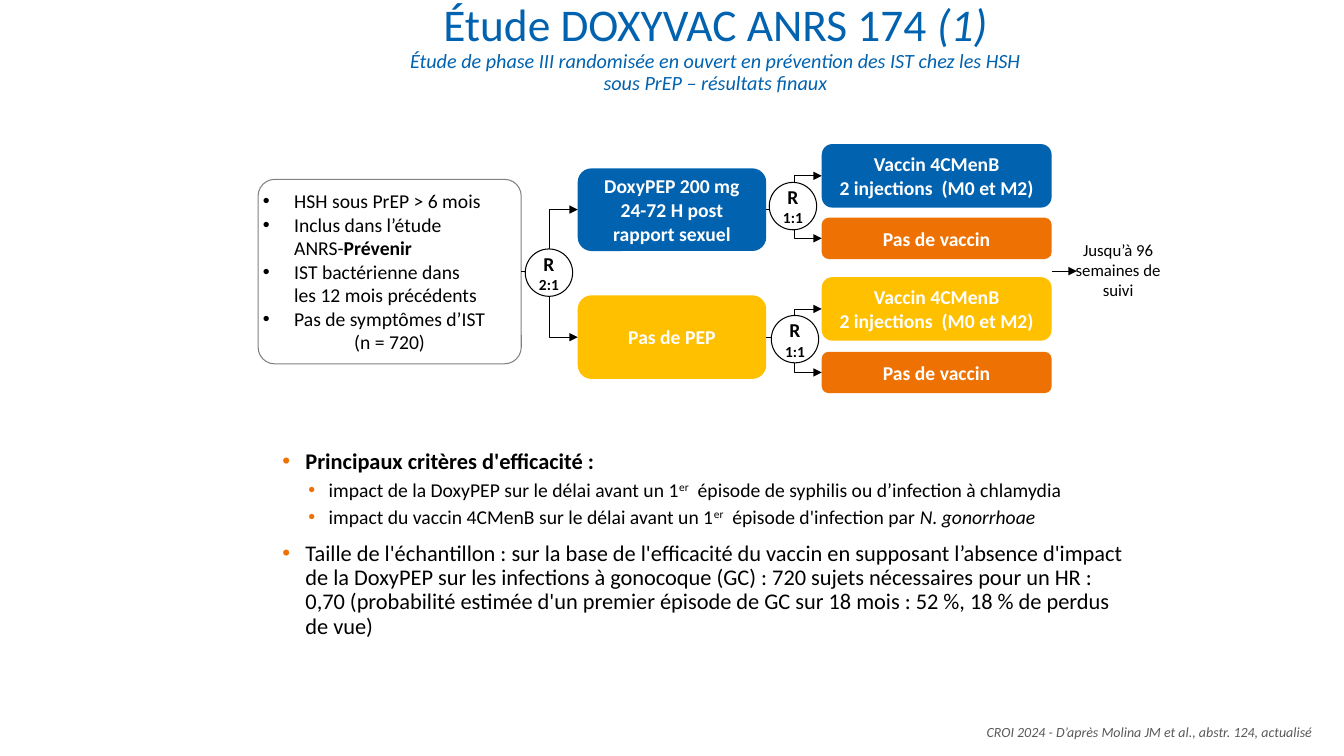
from copy import deepcopy

from lxml.etree import SubElement
from pptx import Presentation
from pptx.dml.color import RGBColor
from pptx.enum.shapes import MSO_CONNECTOR, MSO_SHAPE
from pptx.enum.text import MSO_ANCHOR, PP_ALIGN
from pptx.oxml.ns import qn
from pptx.util import Pt

PX = 9144  # one hundredth of an inch
FONT = "Calibri"
BLUE = RGBColor(0x01, 0x62, 0xAF)
GOLD = RGBColor(0xFF, 0xC0, 0x00)
ORANGE = RGBColor(0xEE, 0x72, 0x03)
GREY = RGBColor(0x80, 0x80, 0x80)
DARK = RGBColor(0x59, 0x59, 0x59)
BLACK = RGBColor(0, 0, 0)
WHITE = RGBColor(0xFF, 0xFF, 0xFF)

BOLD = {"bold": True}
ITALIC = {"italic": True}
MID = {"alignment": PP_ALIGN.CENTER}
LEFT = {"alignment": PP_ALIGN.LEFT}
RIGHT = {"alignment": PP_ALIGN.RIGHT}
TIGHT = {"line_spacing": 0.9}
MAIN = {**LEFT, **TIGHT, "space_before": Pt(10)}
SUB = {**LEFT, **TIGHT, "space_before": Pt(4), "level": 1}
# Bullets: left margin, hanging indent, colour
ITEM = (31, 31, BLACK)
FIRST = (23, 23, ORANGE)
SECOND = (46, 20, ORANGE)


def apply(target, style):
    for name, value in style.items():
        setattr(target, name, value)


def add_mark(para, margin, hang, tint):
    """Put a coloured bullet with a hanging indent on a paragraph."""
    props = para._p.get_or_add_pPr()
    props.set("marL", str(margin * PX))
    props.set("indent", str(-hang * PX))
    SubElement(SubElement(props, qn("a:buClr")), qn("a:srgbClr")).set("val", str(tint))
    SubElement(props, qn("a:buFont")).set("typeface", "Arial")
    SubElement(props, qn("a:buChar")).set("char", "•")


def add_run(para, text, style, tint):
    """Add text in one format; each newline becomes a line break of the same size."""
    style = dict(style)
    raised = style.pop("raised", 0)
    for i, part in enumerate(text.split("\n")):
        if i:
            para.add_line_break()
            para._p[-1].append(deepcopy(props))
        run = para.add_run()
        run.text = part
        apply(run.font, {"name": FONT, **style})
        run.font.color.rgb = tint
        props = run._r.get_or_add_rPr()
        if raised:
            props.set("baseline", str(raised * 1000))


def write(shape, paras, size, tint, anchor=MSO_ANCHOR.MIDDLE, pad=(0, 0), wrap=True):
    """Fill a shape with paragraphs of (format, bullet, runs)."""
    frame = shape.text_frame
    side, top = (n * PX for n in pad)
    apply(frame, {"word_wrap": wrap, "vertical_anchor": anchor,
                  "margin_left": side, "margin_right": side,
                  "margin_top": top, "margin_bottom": top})
    for i, (style, mark, runs) in enumerate(paras):
        para = frame.add_paragraph() if i else frame.paragraphs[0]
        apply(para, style)
        if mark:
            add_mark(para, *mark)
        for text, look in runs:
            add_run(para, text, {"size": Pt(size), **look}, tint)


def add_text(slide, spot, *args, **more):
    write(slide.shapes.add_textbox(*(n * PX for n in spot)), *args, **more)


def add_box(slide, spot, fill=None, line=None, kind=MSO_SHAPE.ROUNDED_RECTANGLE):
    box = slide.shapes.add_shape(kind, *(n * PX for n in spot))
    box.shadow.inherit = False
    if fill is None:
        box.fill.background()
    else:
        box.fill.solid()
        box.fill.fore_color.rgb = fill
    if line is None:
        box.line.fill.background()
    else:
        box.line.color.rgb = line
        box.line.width = Pt(0.75)
    return box


def add_arm(slide, spot, fill, lines):
    """Add one coloured treatment box."""
    box = add_box(slide, spot, fill)
    paras = [(MID, None, [(line, BOLD)]) for line in lines]
    write(box, paras, 14, WHITE, pad=(10, 5), wrap=False)
    return box


def add_arrow(slide, kind, *ends):
    arrow = slide.shapes.add_connector(kind, *ends)
    arrow.line.color.rgb = BLACK
    arrow.line.width = Pt(0.5)
    SubElement(arrow.line._get_or_add_ln(), qn("a:tailEnd")).set("type", "triangle")
    SubElement(arrow._element.spPr, qn("a:effectLst"))
    return arrow


def join(slide, start, end):
    """Lead a bent arrow from a box's right side to another's left side."""
    arrow = add_arrow(slide, MSO_CONNECTOR.ELBOW,
                      start.left + start.width, start.top + start.height // 2,
                      end.left, end.top + end.height // 2)
    arrow.begin_connect(start, 3)
    arrow.end_connect(end, 1)


def add_split(slide, left, top, ratio):
    """Add a circle that marks a randomisation."""
    disc = add_box(slide, (left, top, 47, 47), WHITE, BLACK, MSO_SHAPE.OVAL)
    write(disc, [(MID, None, [("R", BOLD)]),
                 (MID, None, [(ratio, {**BOLD, "size": Pt(11)})])], 14, BLACK)


def add_scheme(slide):
    """Draw the trial: inclusion, two randomisations and follow-up."""
    doxy = add_arm(slide, (573, 167, 187, 82), BLUE,
                   ["DoxyPEP 200 mg", "24-72 H post\nrapport sexuel"])
    none = add_arm(slide, (573, 293, 187, 83), GOLD, ["Pas de PEP"])

    entry = add_box(slide, (256, 178, 261, 183), line=GREY)
    entry.adjustments[0] = 0.09
    points = [[("HSH sous PrEP > 6 mois", {})],
              [("Inclus dans l’étude\nANRS-", {}), ("Prévenir", BOLD)],
              [("IST bactérienne dans\nles 12 mois précédents", {})],
              [("Pas de symptômes d’IST", {})]]
    write(entry, [(LEFT, ITEM, runs) for runs in points]
          + [(MID, None, [("(n = 720)", {})])],
          14, BLACK, anchor=MSO_ANCHOR.TOP, pad=(0, 5))

    follow = add_box(slide, (1052, 229, 114, 78))
    write(follow, [({**MID, "space_before": Pt(2)}, None,
                    [("Jusqu’à 96 semaines de suivi", {})])],
          12, BLACK, anchor=MSO_ANCHOR.TOP, pad=(10, 5))

    pairs = [(entry, doxy), (entry, none)]
    for start, top, low, fill in ((doxy, 143, 216, BLUE), (none, 275, 349, GOLD)):
        shot = add_arm(slide, (815, top, 228, 63), fill,
                       ["Vaccin 4CMenB", "2 injections  (M0 et M2)"])
        bare = add_arm(slide, (815, low, 228, 41), ORANGE, ["Pas de vaccin"])
        pairs += [(start, shot), (start, bare)]
    for start, end in pairs:
        join(slide, start, end)
    add_arrow(slide, MSO_CONNECTOR.STRAIGHT, *(n * PX for n in (1043, 269, 1068, 269)))

    for left, top, ratio in ((521, 247, "2:1"), (763, 181, "1:1"), (765, 313, "1:1")):
        add_split(slide, left, top, ratio)


def main():
    deck = Presentation()
    deck.slide_width, deck.slide_height = 1333 * PX, 750 * PX
    slide = deck.slides.add_slide(deck.slide_layouts[6])

    add_text(slide, (152, 16, 1115, 64), [({**MID, **TIGHT}, None, [
        ("Étude DOXYVAC ANRS 174 ", {}),
        ("(1)\n", ITALIC),
        ("Étude de phase III randomisée en ouvert en prévention des IST chez les HSH\n"
         "sous PrEP – résultats finaux", {**ITALIC, "size": Pt(14.4)}),
    ])], 32.4, BLUE)

    small, raised = {"size": Pt(14)}, {"size": Pt(14), "raised": 30}
    add_text(slide, (280, 447, 836, 247), [
        (MAIN, FIRST, [("Principaux critères d'efficacité :", BOLD)]),
        (SUB, SECOND, [
            ("impact de la DoxyPEP sur le délai avant un 1", small), ("er", raised),
            ("  épisode de syphilis ou d’infection à chlamydia", small)]),
        (SUB, SECOND, [
            ("impact du vaccin 4CMenB sur le délai avant un 1", small), ("er", raised),
            ("  épisode d'infection par ", small),
            ("N. gonorrhoae", {**small, **ITALIC})]),
        (MAIN, FIRST, [(
            "Taille de l'échantillon : sur la base de l'efficacité du vaccin en supposant "
            "l’absence d'impact de la DoxyPEP sur les infections à gonocoque (GC) : "
            "720 sujets nécessaires pour un HR : 0,70 (probabilité estimée d'un premier "
            "épisode de GC sur 18 mois : 52 %, 18 % de perdus de vue)", {})]),
    ], 16, BLACK, anchor=MSO_ANCHOR.TOP)

    add_text(slide, (356, 701, 945, 50), [(RIGHT, None, [
        ("CROI 2024 - D’après Molina JM et al., abstr. 124, actualisé", ITALIC),
    ])], 10, DARK)
    add_scheme(slide)
    deck.save("out.pptx")


if __name__ == "__main__":
    main()
